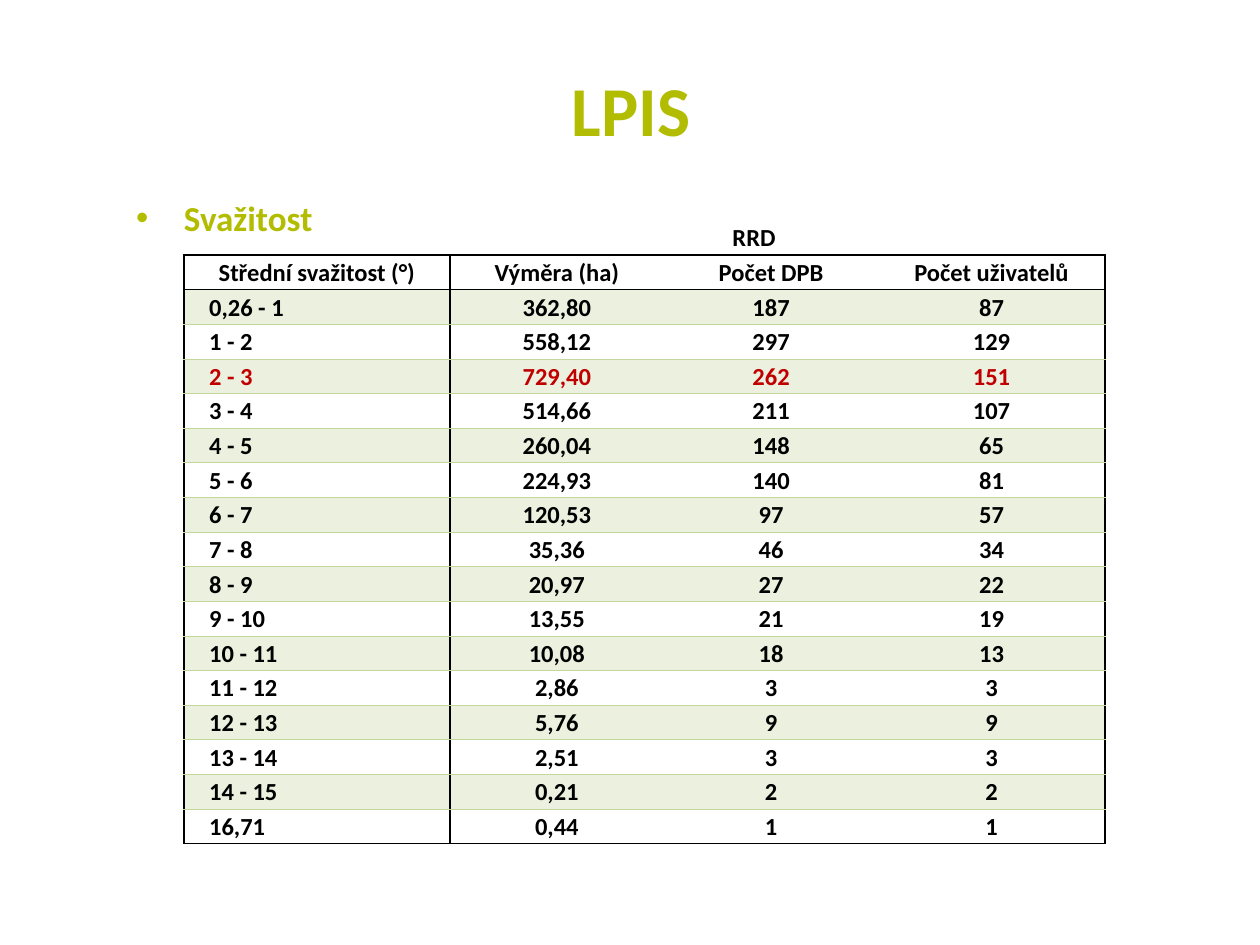
"""Build the LPIS slide with its table of slope classes."""
from pptx import Presentation
from pptx.dml.color import RGBColor
from pptx.enum.text import MSO_ANCHOR, MSO_AUTO_SIZE, PP_ALIGN
from pptx.oxml.ns import qn
from pptx.util import Inches, Pt
from lxml.etree import SubElement

WIDE, HIGH = Inches(10), Inches(7.5)
LIME = RGBColor(0xB2, 0xBC, 0x00)
BLACK = RGBColor(0x00, 0x00, 0x00)
RED = RGBColor(0xC0, 0x00, 0x00)
PALE = RGBColor(0xEB, 0xF1, 0xDE)
GREEN = RGBColor(0xC4, 0xD7, 0x9B)

HEAD = ("Střední svažitost (°)", "Výměra (ha)", "Počet DPB", "Počet uživatelů")
DATA = (
    ("0,26 - 1", "362,80", "187", "87"),
    ("1 - 2", "558,12", "297", "129"),
    ("2 - 3", "729,40", "262", "151"),
    ("3 - 4", "514,66", "211", "107"),
    ("4 - 5", "260,04", "148", "65"),
    ("5 - 6", "224,93", "140", "81"),
    ("6 - 7", "120,53", "97", "57"),
    ("7 - 8", "35,36", "46", "34"),
    ("8 - 9", "20,97", "27", "22"),
    ("9 - 10", "13,55", "21", "19"),
    ("10 - 11", "10,08", "18", "13"),
    ("11 - 12", "2,86", "3", "3"),
    ("12 - 13", "5,76", "9", "9"),
    ("13 - 14", "2,51", "3", "3"),
    ("14 - 15", "0,21", "2", "2"),
    ("16,71", "0,44", "1", "1"),
)
ROWS = (("RRD", "", "", ""), HEAD) + DATA
COLS = (21.1, 17, 17, 17)
PEAK = 4
THICK, THIN = (BLACK, 1), (GREEN, 0.5)


def area(left, top, width, height):
    """Turn percent shares of the slide into lengths."""
    return (int(WIDE * left / 100), int(HIGH * top / 100),
            int(WIDE * width / 100), int(HIGH * height / 100))


def place(shape, *shares):
    """Move a shape to its shares of the slide."""
    shape.left, shape.top, shape.width, shape.height = area(*shares)


def write(frame, text, size=14, color=BLACK, align=PP_ALIGN.CENTER):
    """Fill a text frame with one bold paragraph."""
    line = frame.paragraphs[0]
    line.alignment, line.space_before = align, Pt(0)
    run = line.add_run()
    run.text = text
    font = run.font
    font.name, font.size, font.bold = "Calibri", Pt(size), True
    font.color.rgb = color


def bullet(frame, indent):
    """Give the first paragraph a hanging bullet."""
    props = frame.paragraphs[0]._p.get_or_add_pPr()
    props.set("marL", str(indent))
    props.set("indent", str(-indent))
    SubElement(props, qn("a:buChar")).set("char", "•")


def edge(cell, side, style):
    """Draw one side of a cell, or hide it when there is no style."""
    line = SubElement(cell._tc.get_or_add_tcPr(), qn("a:ln" + side))
    if not style:
        SubElement(line, qn("a:noFill"))
        return
    color, width = style
    line.set("w", str(Pt(width)))
    fill = SubElement(line, qn("a:solidFill"))
    SubElement(fill, qn("a:srgbClr")).set("val", str(color))


def level(rank):
    """Return the style of the level rule above a row."""
    if rank == 0:
        return None
    return THICK if rank in (1, 2, len(ROWS)) else THIN


def upright(row, rank):
    """Return the style of the upright rule left of a column."""
    return THICK if row and rank in (0, 1, len(COLS)) else None


def format_cell(cell, row, col):
    """Set the rules, fill and margins of a cell."""
    edge(cell, "L", upright(row, col))
    edge(cell, "R", upright(row, col + 1))
    edge(cell, "T", level(row))
    edge(cell, "B", level(row + 1))
    if row > 1 and row % 2 == 0:
        cell.fill.solid()
        cell.fill.fore_color.rgb = PALE
    else:
        cell.fill.background()
    label = row > 1 and col == 0
    cell.margin_left = Inches(1.75 if row == 0 else 0.2 if label else 0.01)
    cell.margin_right = cell.margin_top = Inches(0.01)
    cell.margin_bottom = 0
    cell.vertical_anchor = MSO_ANCHOR.MIDDLE


def add_grid(slide):
    """Add the table of slope classes."""
    box = area(14.6, 23.33, sum(COLS), 66)
    grid = slide.shapes.add_table(len(ROWS), len(COLS), *box).table
    grid.first_row = grid.horz_banding = False
    for part, share in zip(grid.columns, COLS):
        part.width = int(WIDE * share / 100)
    for row, texts in enumerate(ROWS):
        for col, text in enumerate(texts):
            cell = grid.cell(row, col)
            format_cell(cell, row, col)
            if text:
                write(cell.text_frame, text,
                      color=RED if row == PEAK else BLACK,
                      align=PP_ALIGN.LEFT if row > 1 and col == 0
                      else PP_ALIGN.CENTER)
    grid.cell(0, 0).merge(grid.cell(0, len(COLS) - 1))


def add_title(slide):
    """Fill the title placeholder."""
    title = slide.shapes.title
    place(title, 5.1, 6.93, 90, 9.2)
    title.text_frame.vertical_anchor = MSO_ANCHOR.MIDDLE
    write(title.text_frame, "LPIS", size=40, color=LIME)


def add_topic(slide):
    """Fill the body placeholder with the topic."""
    body = slide.placeholders[1]
    place(body, 9.8, 20.13, 16.1, 5.87)
    frame = body.text_frame
    frame.word_wrap = False
    frame.auto_size = MSO_AUTO_SIZE.SHAPE_TO_FIT_TEXT
    bullet(frame, Inches(0.38))
    write(frame, "Svažitost", size=20, color=LIME, align=PP_ALIGN.LEFT)


def main():
    """Build and save the slide."""
    deck = Presentation()
    deck.slide_width, deck.slide_height = WIDE, HIGH
    slide = deck.slides.add_slide(deck.slide_layouts[1])
    add_title(slide)
    add_topic(slide)
    add_grid(slide)
    deck.save("out.pptx")


if __name__ == "__main__":
    main()
